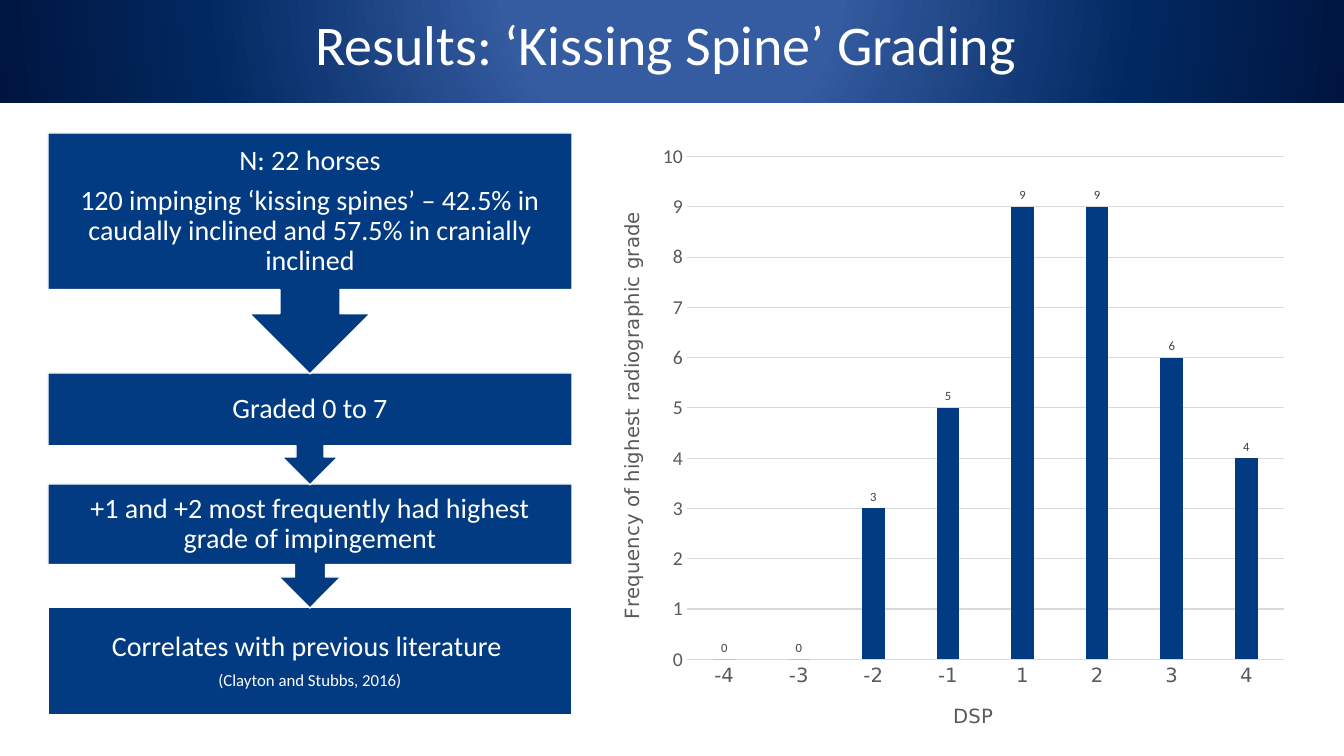
from pptx import Presentation
from pptx.chart.data import CategoryChartData as ChartData
from pptx.dml.color import RGBColor
from pptx.enum.chart import XL_CHART_TYPE as Kind, XL_LABEL_POSITION as Spot, XL_TICK_MARK as Tick
from pptx.enum.shapes import MSO_SHAPE as Shape
from pptx.enum.text import MSO_ANCHOR as Anchor, PP_ALIGN as Align
from pptx.oxml import parse_xml
from pptx.oxml.ns import nsdecls
from pptx.util import Emu, Pt

NAVY, WHITE, GREY, RULE = "023B82", "FFFFFF", "595959", "D9D9D9"
SANS, PLAIN = "Calibri", "DejaVu Sans"
SCALE = 914400 / 100.8


def px(n):
    """Turn pixels into EMU."""
    return Emu(round(n * SCALE))


def tint(code):
    """Turn a hex string into a colour."""
    return RGBColor.from_string(code)


def style(font, size, code, face=SANS):
    """Set the look of a font."""
    font.size, font.name, font.bold = Pt(size), face, False
    font.color.rgb = tint(code)


class Deck:
    """Holds the style and the current slide."""

    def __init__(self):
        """Open a blank slide of 1344 by 756 px."""
        self.prs = Presentation()
        self.prs.slide_width, self.prs.slide_height = px(1344), px(756)
        self.slide = self.prs.slides.add_slide(self.prs.slide_layouts[6])

    def shape(self, kind, box, lines, inset, gap=0.0, lead=1.0):
        """Add a preset shape with centred lines of (text, size)."""
        item = self.slide.shapes.add_shape(kind, *map(px, box))
        item.shadow.inherit = False
        frame = item.text_frame
        frame.word_wrap, frame.vertical_anchor = True, Anchor.MIDDLE
        frame.margin_left = frame.margin_right = px(inset)
        frame.margin_top = frame.margin_bottom = px(inset)
        for i, (text, size) in enumerate(lines):
            para = frame.add_paragraph() if i else frame.paragraphs[0]
            para.alignment, para.line_spacing = Align.CENTER, lead
            para.space_after = Pt(round(gap * size))
            run = para.add_run()
            run.text = text
            style(run.font, size, WHITE)
        return item

    def step(self, kind, top, high, lines):
        """Add one step of the flow."""
        item = self.shape(kind, (48, top, 524, high), lines, 16, 0.35, 0.9)
        item.fill.solid()
        item.fill.fore_color.rgb = tint(NAVY)
        item.line.color.rgb, item.line.width = tint(WHITE), Pt(1)

    def banner(self, box, text, stops):
        """Add the title band with a radial gradient."""
        item = self.shape(Shape.RECTANGLE, box, [(text, 40)], 8)
        item.line.fill.background()
        marks = "".join(f'<a:gs pos="{at * 1000}"><a:srgbClr val="{code}"/></a:gs>'
                        for at, code in stops)
        item.element.spPr.insert(2, parse_xml(
            f'<a:gradFill {nsdecls("a")} rotWithShape="1"><a:gsLst>{marks}</a:gsLst>'
            '<a:path path="circle"><a:fillToRect l="50000" t="-80000" r="50000" b="180000"/>'
            '</a:path></a:gradFill>'))

    def axis(self, axis, title, face):
        """Style one axis and its title."""
        axis.major_tick_mark = axis.minor_tick_mark = Tick.NONE
        style(axis.tick_labels.font, 14, GREY, face)
        run = axis.axis_title.text_frame.paragraphs[0].add_run()
        run.text = title
        style(run.font, 14, GREY, PLAIN)

    def chart(self, box, cats, vals, titles, area):
        """Add the column chart with its plot at the given share of the frame."""
        data = ChartData()
        data.categories = cats
        data.add_series("Series 1", vals)
        chart = self.slide.shapes.add_chart(Kind.COLUMN_CLUSTERED, *map(px, box), data).chart
        chart.has_legend = chart.has_title = False
        style(chart.font, 10, "000000")
        base, side = chart.category_axis, chart.value_axis
        self.axis(base, titles[0], PLAIN)
        self.axis(side, titles[1], SANS)
        side.minimum_scale, side.maximum_scale, side.major_unit = 0, 10, 1
        side.format.line.fill.background()
        for line in (base.format.line, side.major_gridlines.format.line):
            line.color.rgb, line.width = tint(RULE), Pt(0.75)
        plot = chart.plots[0]
        plot.gap_width, plot.overlap, plot.vary_by_categories = 232, -25, False
        bars = plot.series[0]
        bars.format.fill.solid()
        bars.format.fill.fore_color.rgb = tint(NAVY)
        tags = bars.data_labels
        tags.show_value, tags.position = True, Spot.OUTSIDE_END
        style(tags.font, 9, "404040")
        spots = "".join(f'<c:{key} val="{val}"/>' for key, val in zip("xywh", area))
        grid = chart.element.chart.plotArea
        for old in grid.findall("{*}layout"):
            grid.remove(old)
        grid.insert(0, parse_xml(
            f'<c:layout {nsdecls("c")}><c:manualLayout><c:layoutTarget val="inner"/>'
            f'<c:xMode val="edge"/><c:yMode val="edge"/>{spots}</c:manualLayout></c:layout>'))


def main():
    """Build and save the slide."""
    deck = Deck()
    deck.chart((614, 133, 682, 603), ["-4", "-3", "-2", "-1", "1", "2", "3", "4"],
               [0, 0, 3, 5, 9, 9, 6, 4],
               ("DSP", "Frequency of highest radiographic grade"),
               (0.107, 0.039, 0.875, 0.834))
    deck.step(Shape.RECTANGLE, 607, 108,
              [("Correlates with previous literature ", 20), ("(Clayton and Stubbs, 2016)", 12)])
    flow = [
        (484, 124, ["+1 and +2 most frequently had highest grade of impingement"]),
        (373, 112, ["Graded 0 to 7"]),
        (133, 241, ["N: 22 horses", "120 impinging ‘kissing spines’ – 42.5% in caudally "
                    "inclined and 57.5% in cranially inclined"]),
    ]
    for top, high, lines in flow:
        deck.step(Shape.DOWN_ARROW_CALLOUT, top, high, [(text, 20) for text in lines])
    deck.banner((-16, -16, 1376, 119), "Results: ‘Kissing Spine’ Grading ",
                [(24, "355BA0"), (68, "012860"), (100, "00143E")])
    deck.prs.save("out.pptx")


if __name__ == "__main__":
    main()
